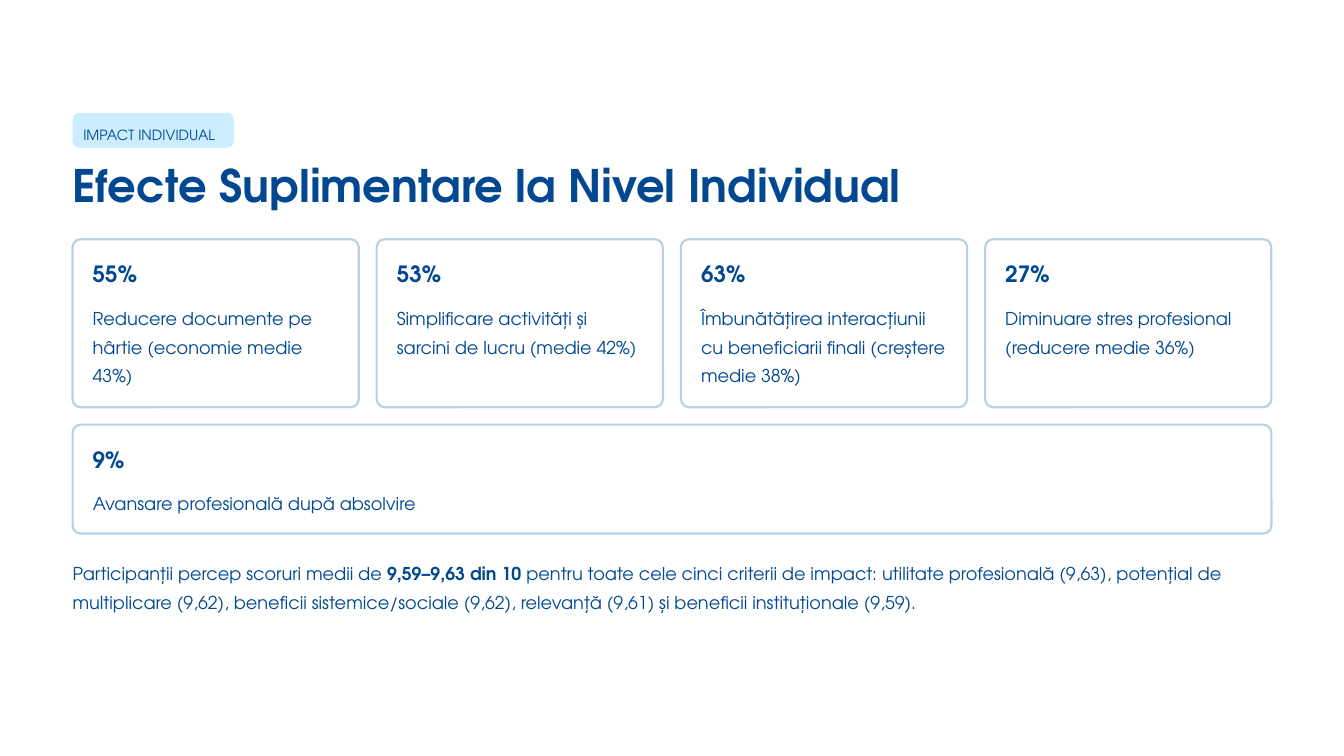
from pptx import Presentation
from pptx.dml.color import RGBColor
from pptx.enum.shapes import MSO_SHAPE
from pptx.util import Inches, Pt

ROUNDED = MSO_SHAPE.ROUNDED_RECTANGLE
FONT = "TeX Gyre Adventor"
NAVY, SKY, BORDER, WHITE = "014890", "CCECFF", "B2D2E5", "FFFFFF"
LEFT, WIDTH = 0.54, 8.92
CARD_WIDTH, CARD_TOP, CARD_HEIGHT = 2.13, 1.78, 1.25
PADDING = 0.15


def color(hex_code):
    return RGBColor.from_string(hex_code)


class SlideBuilder:
    def __init__(self, slide):
        self.slide = slide

    def panel(self, left, top, width, height, fill, line=None, radius=0.06):
        """Draw a rounded rectangle whose corner radius is in inches."""
        panel = self.slide.shapes.add_shape(
            ROUNDED, Inches(left), Inches(top), Inches(width), Inches(height))
        panel.adjustments[0] = radius / min(width, height)
        panel.shadow.inherit = False
        panel.fill.solid()
        panel.fill.fore_color.rgb = color(fill)
        if line:
            panel.line.color.rgb = color(line)
            panel.line.width = Pt(1.13)
        else:
            panel.line.fill.background()

    def text(self, left, top, width, height, runs, size, spacing,
             bold=False, wrap=False):
        """Add one paragraph; runs is a string or a list of (text, bold)."""
        box = self.slide.shapes.add_textbox(
            Inches(left), Inches(top), Inches(width), Inches(height))
        frame = box.text_frame
        frame.margin_left = frame.margin_right = 0
        frame.margin_top = frame.margin_bottom = 0
        frame.word_wrap = wrap
        paragraph = frame.paragraphs[0]
        paragraph.line_spacing = Pt(spacing)
        font = paragraph.font
        font.name, font.size = FONT, Pt(size)
        font.color.rgb = color(NAVY)
        if isinstance(runs, str):
            runs = [(runs, bold)]
        for content, is_bold in runs:
            run = paragraph.add_run()
            run.text = content
            run.font.bold = is_bold

    def card(self, left, top, width, height, share, effect, wrap=True):
        self.panel(left, top, width, height, WHITE, BORDER)
        inner = left + PADDING
        self.text(inner, top + PADDING, 1.7, 0.21, share, 12, 15, bold=True)
        self.text(inner, top + 0.45, width - 2 * PADDING, height - 0.6,
                  effect, 9.5, 15.5, wrap=wrap)


def main():
    prs = Presentation()
    prs.slide_width = Inches(10)
    prs.slide_height = prs.slide_width * 9 // 16
    builder = SlideBuilder(prs.slides.add_slide(prs.slide_layouts[6]))

    builder.panel(LEFT, 0.84, 1.2, 0.26, SKY, radius=0.05)
    builder.text(0.62, 0.89, 1.04, 0.17, "IMPACT INDIVIDUAL", 7.5, 12.5)
    builder.text(LEFT, 1.15, 6.3, 0.42,
                 "Efecte Suplimentare la Nivel Individual", 24, 30.5, bold=True)

    effects = [
        ("55%", "Reducere documente pe hârtie (economie medie 43%)"),
        ("53%", "Simplificare activități și sarcini de lucru (medie 42%)"),
        ("63%", "Îmbunătățirea interacțiunii cu beneficiarii finali "
                "(creștere medie 38%)"),
        ("27%", "Diminuare stres profesional (reducere medie 36%)"),
    ]
    pitch = (WIDTH - CARD_WIDTH) / (len(effects) - 1)
    for column, (share, effect) in enumerate(effects):
        builder.card(LEFT + column * pitch, CARD_TOP, CARD_WIDTH, CARD_HEIGHT,
                     share, effect)
    builder.card(LEFT, 3.16, WIDTH, 0.81, "9%",
                 "Avansare profesională după absolvire", wrap=False)

    builder.text(LEFT, 4.13, WIDTH, 0.65, [
        ("Participanții percep scoruri medii de ", False),
        ("9,59–9,63 din 10", True),
        (" pentru toate cele cinci criterii de impact: utilitate profesională "
         "(9,63), potențial de multiplicare (9,62), beneficii "
         "sistemice/sociale (9,62), relevanță (9,61) și beneficii "
         "instituționale (9,59).", False),
    ], 9.5, 15.5, wrap=True)

    prs.save("out.pptx")


if __name__ == "__main__":
    main()
